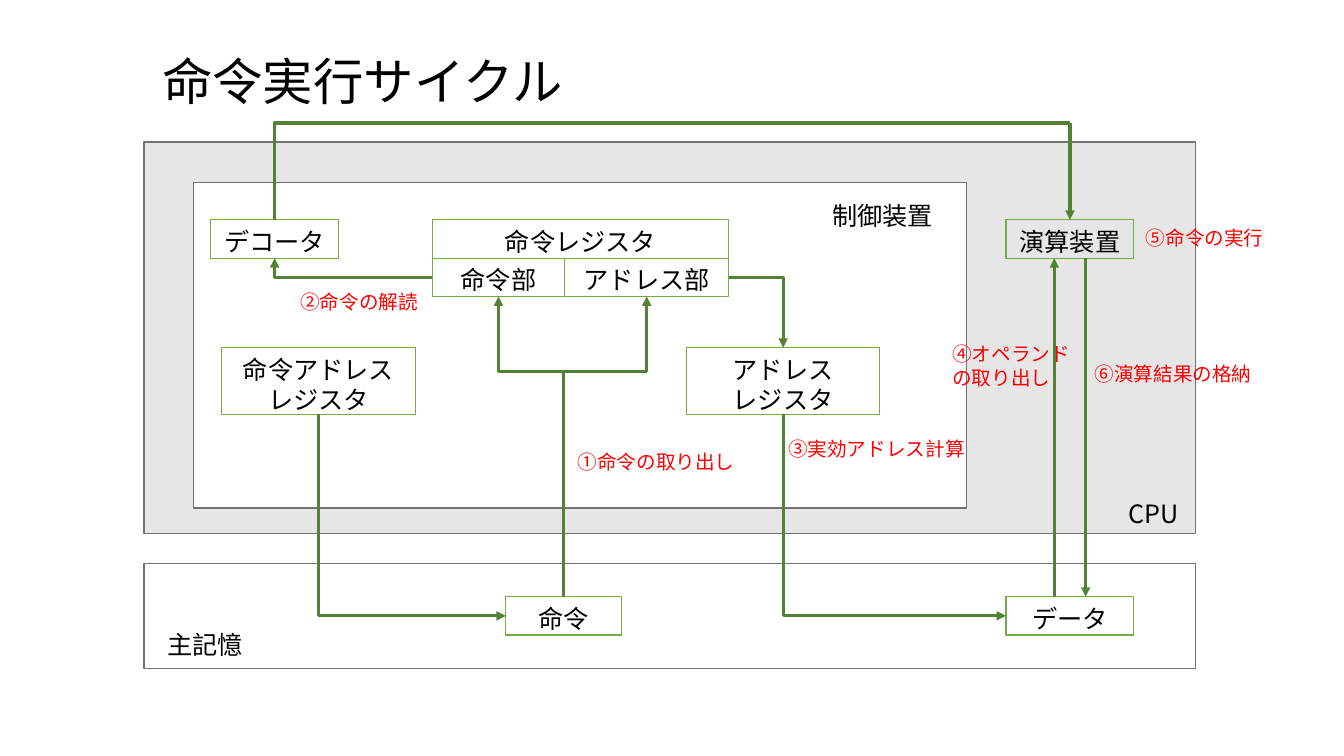
from lxml import etree
from pptx import Presentation
from pptx.dml.color import RGBColor
from pptx.enum.shapes import MSO_CONNECTOR, MSO_SHAPE
from pptx.enum.text import MSO_ANCHOR, PP_ALIGN
from pptx.oxml.ns import qn
from pptx.util import Pt

THEME = {
    "sans": "Noto Sans CJK JP", "latin": "Arial",
    "ink": "000000", "step": "FF0000", "cpu": "E7E6E6", "control": "FFFFFF",
    "frame": "767171", "box": "70AD47", "arrow": "548235",
    "title_size": 36, "body_size": 18, "step_size": 14,
    "frame_width": 1, "box_width": 0.75, "arrow_width": 2.25,
    "line_pitch": 1.2, "inset_x": 7.2, "inset_y": 4.6,
}

PANELS = [
    ((103, 101.5, 751, 279.4), "cpu"),
    ((138.2, 130.3, 552.2, 232.6), "control"),
    ((103, 402.5, 751, 74.9), None),
]

TOP, UPPER, MIDDLE, BOTTOM = 157, 184.4, 248.4, 426.2
ROW, DOUBLE_ROW = 27.4, 47.5

BOXES = {
    "decoder": (150.5, TOP, 91.4, ROW, ["デコータ"], "latin"),
    "register": (308.9, TOP, 211.7, ROW, ["命令レジスタ"], "sans"),
    "operation": (308.9, UPPER, 94.3, ROW, ["命令部"], "sans"),
    "address": (403.2, UPPER, 117.4, ROW, ["アドレス部"], "sans"),
    "counter": (158.4, MIDDLE, 138.2, DOUBLE_ROW, ["命令アドレス", "レジスタ"], "sans"),
    "address_register": (490.3, MIDDLE, 138.2, DOUBLE_ROW, ["アドレス", "レジスタ"], "sans"),
    "alu": (718.6, TOP, 91.4, ROW, ["演算装置"], "latin"),
    "data": (718.6, BOTTOM, 91.4, ROW, ["データ"], "latin"),
    "instruction": (361.4, BOTTOM, 82.8, ROW, ["命令"], "latin"),
}

LABELS = [
    (108.7, 31, 391, 51, "命令実行サイクル", "title_size", "ink"),
    (799.2, 351.4, 57.6, ROW, "CPU", "body_size", "ink"),
    (587.5, 138.2, 91.4, ROW, "制御装置", "body_size", "ink"),
    (112.3, 445, 91.4, ROW, "主記憶", "body_size", "ink"),
    (405.4, 316.8, 138.2, 24.5, "①命令の取り出し", "step_size", "step"),
    (207.4, 202.3, 128.9, 24.5, "②命令の解読", "step_size", "step"),
    (555.8, 307.4, 144.7, 24.5, "③実効アドレス計算", "step_size", "step"),
    (673.2, 239.8, 98.7, 41, "④オペランドの取り出し", "step_size", "step"),
    (811.4, 157, 105.1, 24.5, "⑤命令の実行", "step_size", "step"),
    (774.7, 254.2, 143.3, 24.5, "⑥演算結果の格納", "step_size", "step"),
]

SIDES = {"left": (0, 0.5), "right": (1, 0.5), "top": (0.5, 0), "bottom": (0.5, 1)}

ELBOWS = [
    ("operation", "left", "decoder", "bottom"),
    ("address", "right", "address_register", "top"),
    ("address_register", "bottom", "data", "left"),
    ("counter", "bottom", "instruction", "left"),
]
FORKS = ["operation", "address"]
FORK_ADJUST = 74900
BUS_Y = 87.8
DATA_SHIFT = 11.2


def color(key):
    return RGBColor.from_string(THEME[key])


def write(frame, lines, size, ink, font, align):
    frame.word_wrap = True
    frame.vertical_anchor = MSO_ANCHOR.TOP
    frame.margin_left = frame.margin_right = Pt(THEME["inset_x"])
    frame.margin_top = frame.margin_bottom = Pt(THEME["inset_y"])
    for index, line in enumerate(lines):
        paragraph = frame.add_paragraph() if index else frame.paragraphs[0]
        paragraph.alignment = align
        paragraph.line_spacing = Pt(THEME[size] * THEME["line_pitch"])
        run = paragraph.add_run()
        run.text = line
        run.font.size = Pt(THEME[size])
        run.font.color.rgb = color(ink)
        run.font.name = THEME[font]
        east_asian = etree.SubElement(run.font._element, qn("a:ea"))
        east_asian.set("typeface", THEME["sans"])


def add_rect(slide, bounds, fill, line):
    rect = slide.shapes.add_shape(MSO_SHAPE.RECTANGLE, *map(Pt, bounds))
    rect.shadow.inherit = False
    if fill:
        rect.fill.solid()
        rect.fill.fore_color.rgb = color(fill)
    else:
        rect.fill.background()
    rect.line.color.rgb = color(line)
    rect.line.width = Pt(THEME[line + "_width"])
    return rect


def port(box, side):
    left, top, width, height = BOXES[box][:4]
    across, down = SIDES[side]
    return left + width * across, top + height * down


def add_arrow(slide, start, end, preset="line", vertical=False, adjust=None, head=True):
    (x1, y1), (x2, y2) = start, end
    if vertical:
        mid_x, mid_y = (x1 + x2) / 2, (y1 + y2) / 2
        half_x, half_y = (y1 - y2) / 2, (x2 - x1) / 2
        x1, y1, x2, y2 = mid_x - half_x, mid_y - half_y, mid_x + half_x, mid_y + half_y
    kind = MSO_CONNECTOR.STRAIGHT if preset == "line" else MSO_CONNECTOR.ELBOW
    arrow = slide.shapes.add_connector(kind, Pt(x1), Pt(y1), Pt(x2), Pt(y2))
    arrow.line.color.rgb = color("arrow")
    arrow.line.width = Pt(THEME["arrow_width"])
    properties = arrow._element.spPr
    geometry = properties.find(qn("a:prstGeom"))
    geometry.set("prst", preset)
    if vertical:
        properties.find(qn("a:xfrm")).set("rot", str(270 * 60000))
    if adjust:
        guide = etree.SubElement(geometry.find(qn("a:avLst")), qn("a:gd"))
        guide.set("name", "adj1")
        guide.set("fmla", f"val {adjust}")
    if head:
        etree.SubElement(properties.find(qn("a:ln")), qn("a:tailEnd")).set("type", "triangle")
    etree.SubElement(properties, qn("a:effectLst"))


def main():
    deck = Presentation()
    deck.slide_width, deck.slide_height = Pt(960), Pt(540)
    slide = deck.slides.add_slide(deck.slide_layouts[6])

    for bounds, fill in PANELS:
        add_rect(slide, bounds, fill, "frame")
    for *bounds, lines, font in BOXES.values():
        box = add_rect(slide, bounds, None, "box")
        write(box.text_frame, lines, "body_size", "ink", font, PP_ALIGN.CENTER)

    for source, source_side, target, target_side in ELBOWS:
        add_arrow(slide, port(source, source_side), port(target, target_side),
                  "bentConnector2", vertical=source_side == "bottom")
    for target in FORKS:
        add_arrow(slide, port("instruction", "top"), port(target, "bottom"),
                  "bentConnector3", vertical=True, adjust=FORK_ADJUST)

    alu_x, alu_top = port("alu", "top")
    add_arrow(slide, port("decoder", "top"), (alu_x, BUS_Y),
              "bentConnector2", vertical=True, head=False)
    add_arrow(slide, (alu_x, BUS_Y), (alu_x, alu_top))
    alu_bottom, data_top = port("alu", "bottom")[1], port("data", "top")[1]
    add_arrow(slide, (alu_x + DATA_SHIFT, alu_bottom), (alu_x + DATA_SHIFT, data_top))
    add_arrow(slide, (alu_x - DATA_SHIFT, data_top), (alu_x - DATA_SHIFT, alu_bottom))

    for *bounds, text, size, ink in LABELS:
        label = slide.shapes.add_textbox(*map(Pt, bounds))
        write(label.text_frame, [text], size, ink, "sans", PP_ALIGN.LEFT)

    deck.save("out.pptx")


if __name__ == "__main__":
    main()
